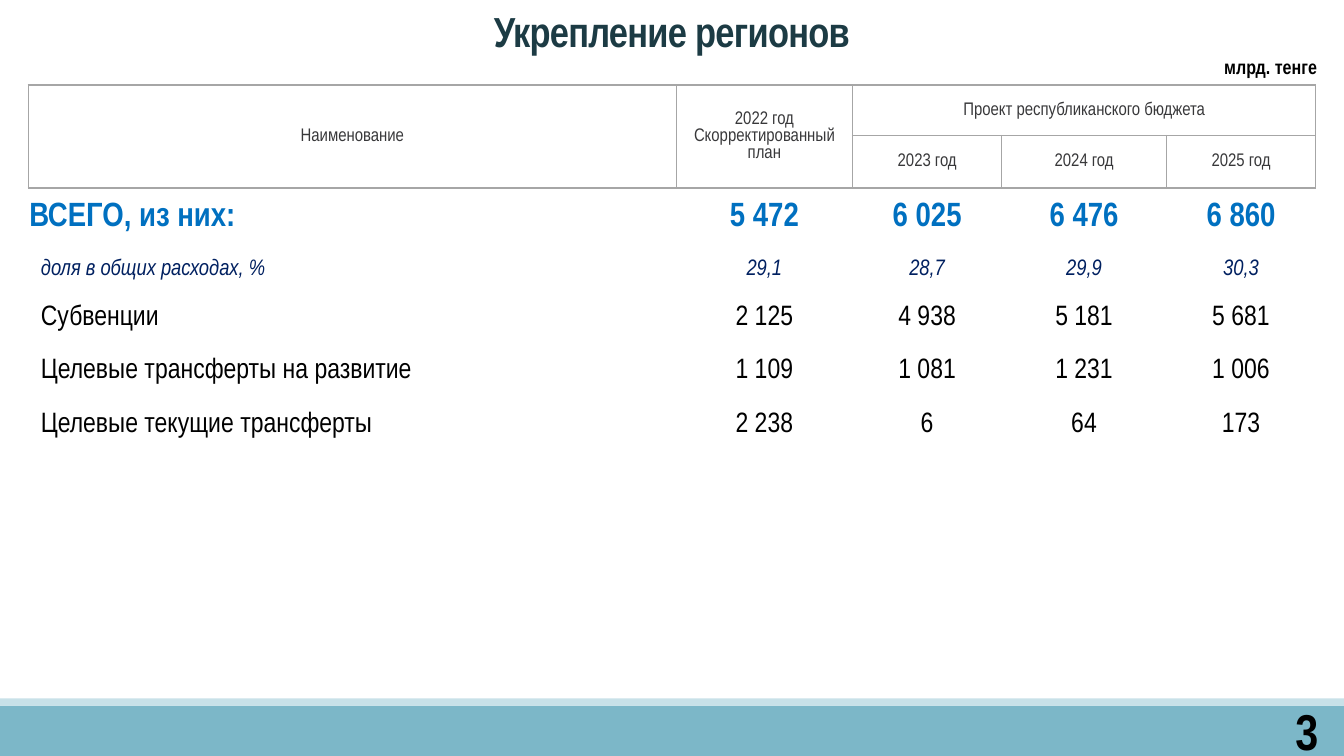
from dataclasses import dataclass

from lxml.etree import SubElement
from pptx import Presentation
from pptx.dml.color import RGBColor
from pptx.enum.shapes import MSO_SHAPE
from pptx.enum.text import MSO_ANCHOR, MSO_AUTO_SIZE, PP_ALIGN
from pptx.oxml.ns import qn
from pptx.util import Pt

PX = 9525
PLAIN = "{2D5ABB26-0587-4C30-8999-92F81FD0307C}"


@dataclass(frozen=True)
class Style:
    """Type size, colour and weight of a run."""
    size: int
    color: str
    bold: bool = False
    italic: bool = False
    track: int = 0


@dataclass(frozen=True)
class Theme:
    """Colours and type sizes of the slide."""
    font: str = "Arial Narrow"
    bar: str = "7CB7C8"
    strip: str = "C8E1E8"
    rule: str = "A6A6A6"
    title: Style = Style(30, "1C3B44", bold=True, track=-50)
    unit: Style = Style(14, "000000", bold=True)
    page: Style = Style(36, "000000", bold=True)
    head: Style = Style(13, "38383A")
    total: Style = Style(24, "0070C0", bold=True)
    share: Style = Style(16, "002060", italic=True)
    item: Style = Style(20, "000000")


THEME = Theme()
WIDTHS = (617, 168, 142, 157, 142)
HEIGHTS = (48, 49, 56, 43, 50, 50, 53)
HEADS = (
    (0, 0, 1, 0, ("Наименование",)),
    (0, 1, 1, 1, ("2022 год", "Скорректированный план")),
    (0, 2, 0, 4, ("Проект республиканского бюджета",)),
    (1, 2, 1, 2, ("2023 год",)),
    (1, 3, 1, 3, ("2024 год",)),
    (1, 4, 1, 4, ("2025 год",)),
)
ROWS = (
    (THEME.total, 1, ("ВСЕГО, из них:", "5 472", "6 025", "6 476", "6 860")),
    (THEME.share, 12, ("доля в общих расходах, %", "29,1", "28,7", "29,9", "30,3")),
    (THEME.item, 12, ("Субвенции", "2 125", "4 938", "5 181", "5 681")),
    (THEME.item, 12, ("Целевые трансферты на развитие", "1 109", "1 081", "1 231", "1 006")),
    (THEME.item, 12, ("Целевые текущие трансферты", "2 238", "6", "64", "173")),
)


def scale(*sizes):
    """Turn px into EMU."""
    return [size * PX for size in sizes]


def write(frame, lines, style, align, space=None):
    """Fill a text frame, one paragraph a line."""
    for num, line in enumerate(lines):
        para = frame.add_paragraph() if num else frame.paragraphs[0]
        para.alignment = align
        para.line_spacing = space
        run = para.add_run()
        run.text = line
        font = run.font
        font.name = THEME.font
        font.size = Pt(style.size)
        font.bold = style.bold
        font.italic = style.italic
        font.color.rgb = RGBColor.from_string(style.color)
        if style.track:
            font._element.set("spc", str(style.track))


def add_bar(slide, box, color):
    """Draw a plain filled strip."""
    bar = slide.shapes.add_shape(MSO_SHAPE.RECTANGLE, *scale(*box))
    bar.shadow.inherit = False
    bar.fill.solid()
    bar.fill.fore_color.rgb = RGBColor.from_string(color)
    bar.line.fill.background()


def setup(frame):
    """Centre a frame vertically and keep its size."""
    frame.word_wrap = True
    frame.auto_size = MSO_AUTO_SIZE.NONE
    frame.vertical_anchor = MSO_ANCHOR.MIDDLE


def add_title(slide, box, text):
    """Place and fill the title placeholder."""
    title = slide.shapes.title
    title.left, title.top, title.width, title.height = scale(*box)
    setup(title.text_frame)
    write(title.text_frame, [text], THEME.title, PP_ALIGN.CENTER, 1.1)


def add_note(slide, box, text, style, space=None):
    """Add a text box set to the right."""
    frame = slide.shapes.add_textbox(*scale(*box)).text_frame
    setup(frame)
    write(frame, [text], style, PP_ALIGN.RIGHT, space)


def edge(cell, sides):
    """Rule the given sides of a cell and clear the others."""
    props = cell._tc.get_or_add_tcPr()
    for side in "LRTB":
        line = SubElement(props, qn(f"a:ln{side}"), w=str(Pt(1)))
        if side in sides:
            fill = SubElement(line, qn("a:solidFill"))
            SubElement(fill, qn("a:srgbClr"), val=THEME.rule)
        else:
            SubElement(line, qn("a:noFill"))


def fill_cell(cell, lines, style, align, inset=1):
    """Set the insets and text of a cell."""
    cell.vertical_anchor = MSO_ANCHOR.MIDDLE
    cell.margin_left, cell.margin_right, cell.margin_top, cell.margin_bottom = scale(inset, 1, 1, 0)
    write(cell.text_frame, lines, style, align)


def add_grid(slide, left, top):
    """Build the budget table."""
    box = scale(left, top, sum(WIDTHS), sum(HEIGHTS))
    table = slide.shapes.add_table(len(HEIGHTS), len(WIDTHS), *box).table
    table.first_row = table.horz_banding = False
    table._tbl.tblPr.find(qn("a:tableStyleId")).text = PLAIN
    for col, width in zip(table.columns, scale(*WIDTHS)):
        col.width = width
    for row, height in zip(table.rows, scale(*HEIGHTS)):
        row.height = height
    for num, row in enumerate(table.rows):
        for cell in row.cells:
            edge(cell, "LRTB" if num < 2 else "T" if num == 2 else "")
            cell.fill.background()
    for row, col, last, end, lines in HEADS:
        cell = table.cell(row, col)
        if (row, col) != (last, end):
            cell.merge(table.cell(last, end))
        fill_cell(cell, lines, THEME.head, PP_ALIGN.CENTER)
    for row, (style, inset, texts) in enumerate(ROWS, 2):
        for col, text in enumerate(texts):
            align = PP_ALIGN.CENTER if col else PP_ALIGN.LEFT
            fill_cell(table.cell(row, col), [text], style, align, 1 if col else inset)


def main():
    """Build and save the slide."""
    deck = Presentation()
    deck.slide_width, deck.slide_height = scale(1280, 720)
    slide = deck.slides.add_slide(deck.slide_layouts[5])
    add_bar(slide, (0, 672, 1280, 48), THEME.bar)
    add_bar(slide, (0, 665, 1280, 7), THEME.strip)
    add_note(slide, (1128, 677, 137, 38), "3", THEME.page)
    add_title(slide, (0, 2, 1280, 50), "Укрепление регионов")
    add_grid(slide, 27, 81)
    add_note(slide, (1146, 51, 118, 27), "млрд. тенге", THEME.unit, 0.9)
    deck.save("out.pptx")


if __name__ == "__main__":
    main()
